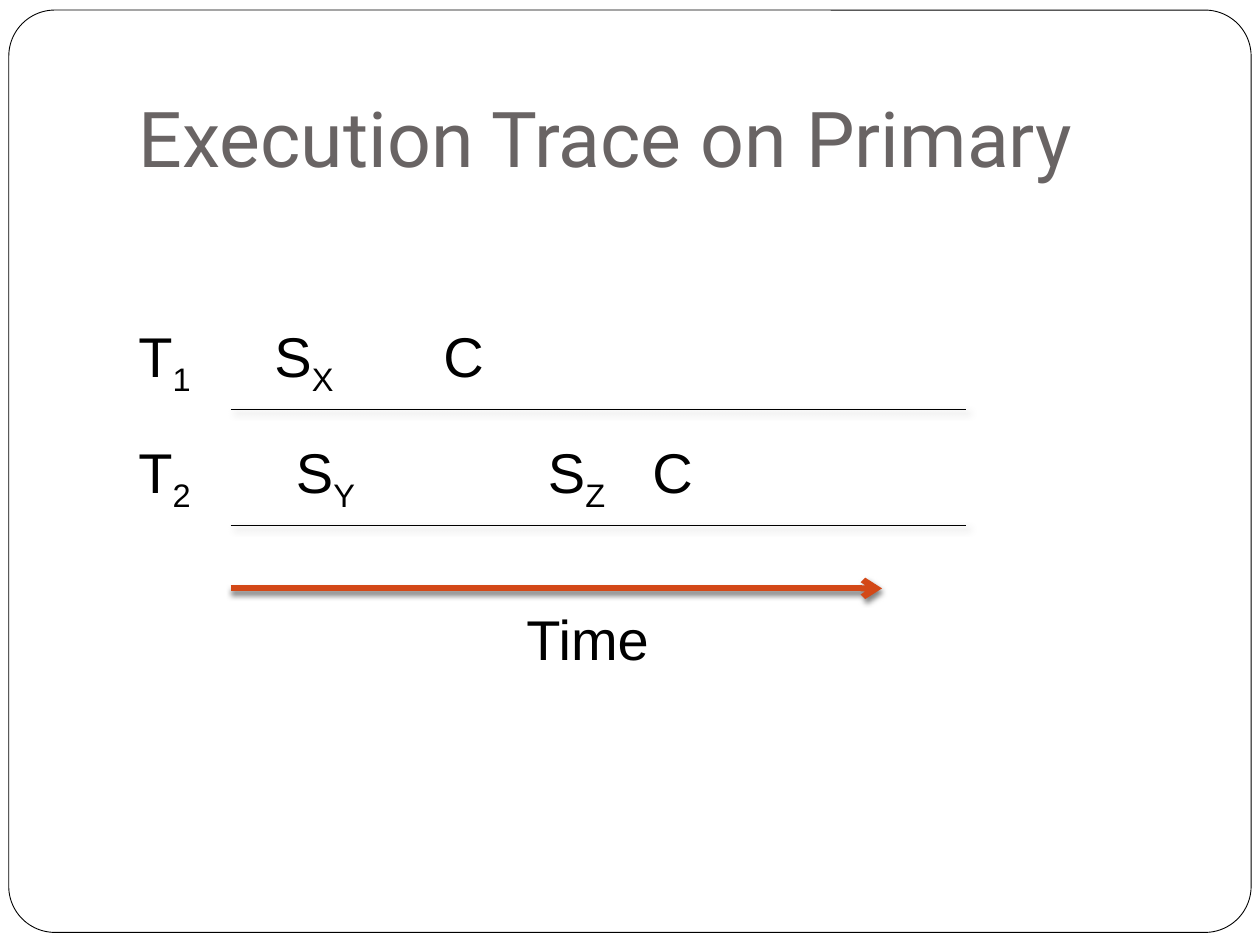
from lxml import etree
from pptx import Presentation
from pptx.dml.color import RGBColor
from pptx.enum.shapes import MSO_CONNECTOR as CONN, MSO_SHAPE as SHAPE
from pptx.enum.text import MSO_ANCHOR as ANCHOR, MSO_AUTO_SIZE as AUTO, PP_ALIGN as ALIGN
from pptx.oxml.ns import qn
from pptx.util import Inches, Pt

COLORS = {"paper": "FFFFFF", "ink": "000000", "title": "696464", "time": "D34817"}
RGB = {name: RGBColor.from_string(value) for name, value in COLORS.items()}


def add_line(s, x1, x2, y, color, width, blur, dist, angle, alpha):
    """Add a horizontal line with an outer shadow."""
    line = s.shapes.add_connector(CONN.STRAIGHT, Inches(x1), Inches(y), Inches(x2), Inches(y))
    line.line.color.rgb = RGB[color]
    line.line.width = Pt(width)
    effects = etree.SubElement(line._element.spPr, qn("a:effectLst"))
    shadow = etree.SubElement(effects, qn("a:outerShdw"), blurRad=str(Pt(blur)),
                              dist=str(Pt(dist)), dir=str(angle * 60000), rotWithShape="0")
    tint = etree.SubElement(shadow, qn("a:srgbClr"), val=COLORS["ink"])
    etree.SubElement(tint, qn("a:alpha"), val=str(alpha * 1000))
    return line


def add_label(s, x, y, width, text, sub=""):
    """Add a label with an optional subscript."""
    tf = s.shapes.add_textbox(Inches(x), Inches(y), Inches(width), Inches(0.64)).text_frame
    tf.word_wrap = False
    tf.auto_size = AUTO.SHAPE_TO_FIT_TEXT
    p = tf.paragraphs[0]
    for part, baseline in ((text, None), (sub, "-25000")):
        if part:
            r = p.add_run()
            r.text = part
            r.font.name = "Arial"
            r.font.size = Pt(32)
            r.font.color.rgb = RGB["ink"]
            if baseline:
                r.font._element.set("baseline", baseline)


prs = Presentation()
prs.slide_width, prs.slide_height = Inches(10), Inches(7.5)
s = prs.slides.add_slide(prs.slide_layouts[5])

# Rounded frame behind everything
frame = s.shapes.add_shape(SHAPE.ROUNDED_RECTANGLE, Inches(0.07), Inches(0.08),
                           Inches(9.86), Inches(7.32))
frame.adjustments[0] = 0.05
frame.shadow.inherit = False
frame.fill.solid()
frame.fill.fore_color.rgb = RGB["paper"]
frame.line.color.rgb = RGB["ink"]
frame.line.width = Pt(0.5)
s.shapes._spTree.insert(2, frame._element)

# Title
title = s.shapes.title
title.left, title.top, title.width, title.height = map(Inches, (1, 0.3, 8.5, 1.25))
tf = title.text_frame
tf.auto_size = AUTO.NONE
tf.word_wrap = True
tf.vertical_anchor = ANCHOR.BOTTOM
tf.margin_bottom = Inches(0.1)
p = tf.paragraphs[0]
p.alignment = ALIGN.LEFT
r = p.add_run()
r.text = "Execution Trace on Primary"
r.font.name = "Roboto"
r.font.size = Pt(44)
r.font.color.rgb = RGB["title"]

# Transactions: top of the row, then left, width, text and subscript of each label
rows = [
    (2.5, [(1, 0.64, "T", "1"), (2.08, 0.7, "S", "X"), (3.42, 0.53, "C", "")]),
    (3.42, [(1, 0.64, "T", "2"), (2.25, 0.7, "S", "Y"), (4.25, 0.68, "S", "Z"),
            (5.08, 0.53, "C", "")]),
]
for top, labels in rows:
    add_line(s, 1.83, 7.67, top + 0.75, "ink", 0.75, blur=4, dist=3, angle=45, alpha=40)
    for x, width, text, sub in labels:
        add_label(s, x, top, width, text, sub)

# Time axis
arrow = add_line(s, 1.83, 7, 4.67, "time", 3.5, blur=3, dist=2, angle=90, alpha=50)
etree.SubElement(arrow.line._get_or_add_ln(), qn("a:tailEnd"), type="arrow")
add_label(s, 4.08, 4.75, 1.18, "Time")

prs.save("out.pptx")
